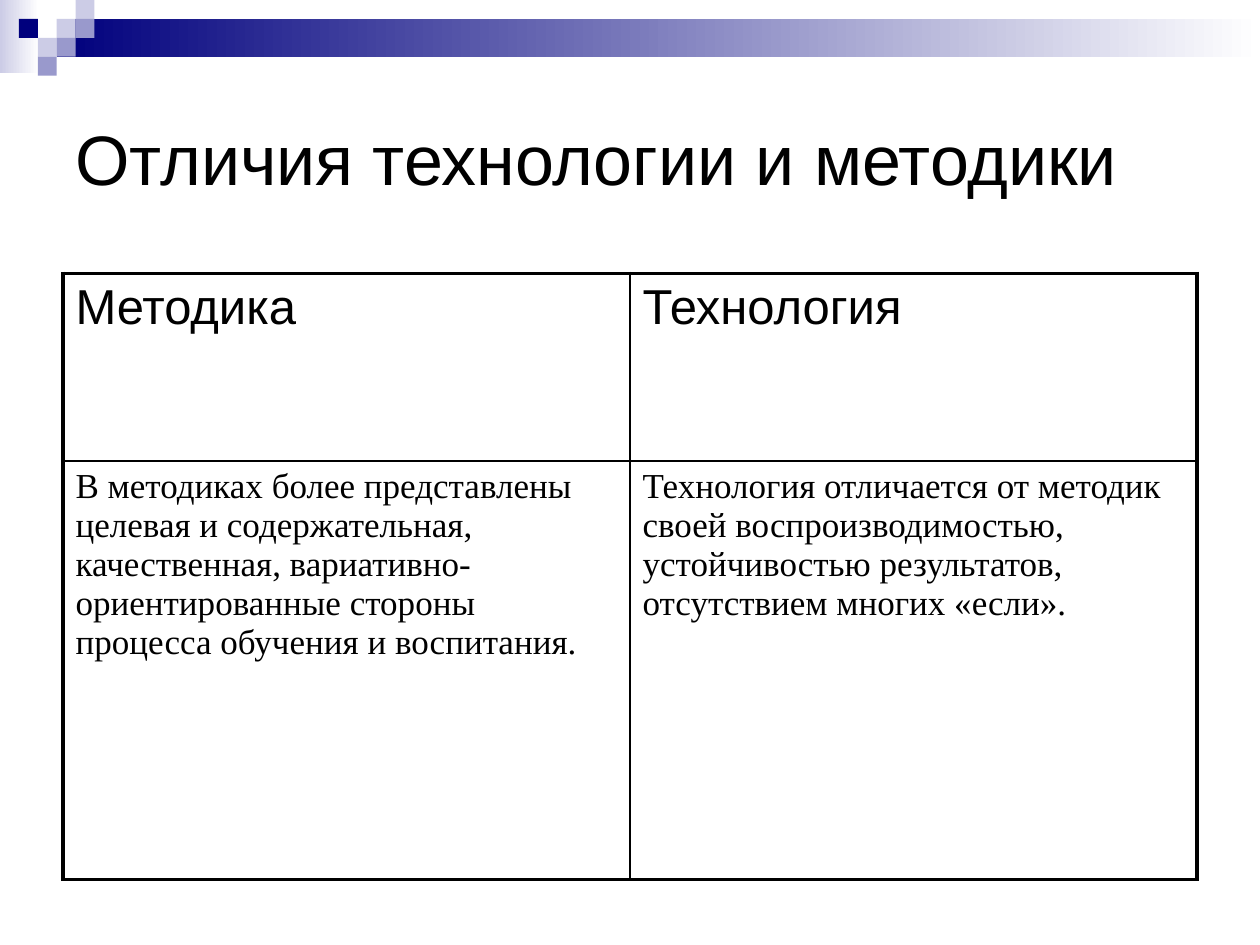
from lxml.etree import SubElement
from pptx import Presentation
from pptx.dml.color import RGBColor
from pptx.enum.shapes import MSO_SHAPE as Shape
from pptx.enum.text import MSO_ANCHOR as Anchor
from pptx.oxml.ns import qn
from pptx.util import Inches, Pt

WIDTH, HEIGHT = 10, 7.5
MARGIN = WIDTH / 20
CONTENT_WIDTH = WIDTH - 2 * MARGIN
UNIT = 0.15  # side of one square in the corner mosaic

NAVY, VIOLET, LILAC = "00007D", "9999CC", "CCCCE6"
WHITE, BLACK = "FFFFFF", "000000"
OUTER, INNER = 2.25, 1

# (column, row, colour) on the mosaic grid
MOSAIC = [
    (3, 1, LILAC), (4, 0, LILAC), (4, 1, VIOLET), (2, 2, LILAC),
    (1, 1, NAVY), (3, 2, VIOLET), (2, 3, VIOLET),
]
HEADINGS = ["Методика", "Технология"]
DESCRIPTIONS = [
    "В методиках более представлены целевая и содержательная, качественная, "
    "вариативно-ориентированные стороны процесса обучения и воспитания.",
    "Технология отличается от методик своей воспроизводимостью, "
    "устойчивостью результатов, отсутствием многих «если».",
]
ROW_HEIGHTS = [1.49, 3.32]


def rgb(value):
    return RGBColor.from_string(value)


def write(frame, text, size, font="Arial", color=BLACK):
    frame.word_wrap = True
    run = frame.paragraphs[0].add_run()
    run.text = text
    run.font.size = Pt(size)
    run.font.name = font
    run.font.color.rgb = rgb(color)


def add_block(slide, left, top, width, height, *colors):
    """Borderless rectangle: one colour is solid, two fade left to right."""
    block = slide.shapes.add_shape(
        Shape.RECTANGLE, *map(Inches, (left, top, width, height)))
    block.shadow.inherit = False
    block.line.fill.background()
    if len(colors) == 1:
        block.fill.solid()
        block.fill.fore_color.rgb = rgb(colors[0])
        return
    block.fill.gradient()
    block.fill.gradient_angle = 0
    for position, (stop, color) in enumerate(zip(block.fill.gradient_stops, colors)):
        stop.position = position
        stop.color.rgb = rgb(color)


def add_header_band(slide):
    add_block(slide, 0, 0, 0.31, 0.58, LILAC, WHITE)
    add_block(slide, 3 * UNIT, UNIT, WIDTH - 3 * UNIT, 2 * UNIT, NAVY, WHITE)
    for column, row, color in MOSAIC:
        add_block(slide, column * UNIT, row * UNIT, UNIT, UNIT, color)


def add_title(slide, text):
    box = slide.shapes.add_textbox(
        *map(Inches, (MARGIN, 0.5, CONTENT_WIDTH, HEIGHT / 5)))
    box.text_frame.vertical_anchor = Anchor.MIDDLE
    write(box.text_frame, text, 40)


def set_borders(cell, widths):
    """Draw the cell's sides; widths maps L, R, T, B to points."""
    properties = cell._tc.get_or_add_tcPr()
    for index, side in enumerate("LRTB"):
        line = properties.makeelement(qn(f"a:ln{side}"), {"w": str(Pt(widths[side]))})
        fill = SubElement(line, qn("a:solidFill"))
        SubElement(fill, qn("a:srgbClr"), val=BLACK)
        properties.insert(index, line)


def add_comparison(slide):
    rows, columns = len(ROW_HEIGHTS), len(HEADINGS)
    table = slide.shapes.add_table(
        rows, columns,
        *map(Inches, (MARGIN, 2.17, CONTENT_WIDTH, sum(ROW_HEIGHTS)))).table
    table.first_row = table.horz_banding = False
    for row, height in zip(table.rows, ROW_HEIGHTS):
        row.height = Inches(height)

    formats = [{"size": 28}, {"size": 20, "font": "Times New Roman"}]
    for r, texts in enumerate([HEADINGS, DESCRIPTIONS]):
        for c, text in enumerate(texts):
            cell = table.cell(r, c)
            cell.fill.background()
            write(cell.text_frame, text, **formats[r])
            on_edge = {"L": c == 0, "R": c == columns - 1,
                       "T": r == 0, "B": r == rows - 1}
            set_borders(cell, {side: OUTER if edge else INNER
                               for side, edge in on_edge.items()})


def main():
    deck = Presentation()
    deck.slide_width, deck.slide_height = Inches(WIDTH), Inches(HEIGHT)
    slide = deck.slides.add_slide(deck.slide_layouts[6])
    add_header_band(slide)
    add_title(slide, "Отличия технологии и методики")
    add_comparison(slide)
    deck.save("out.pptx")


if __name__ == "__main__":
    main()
